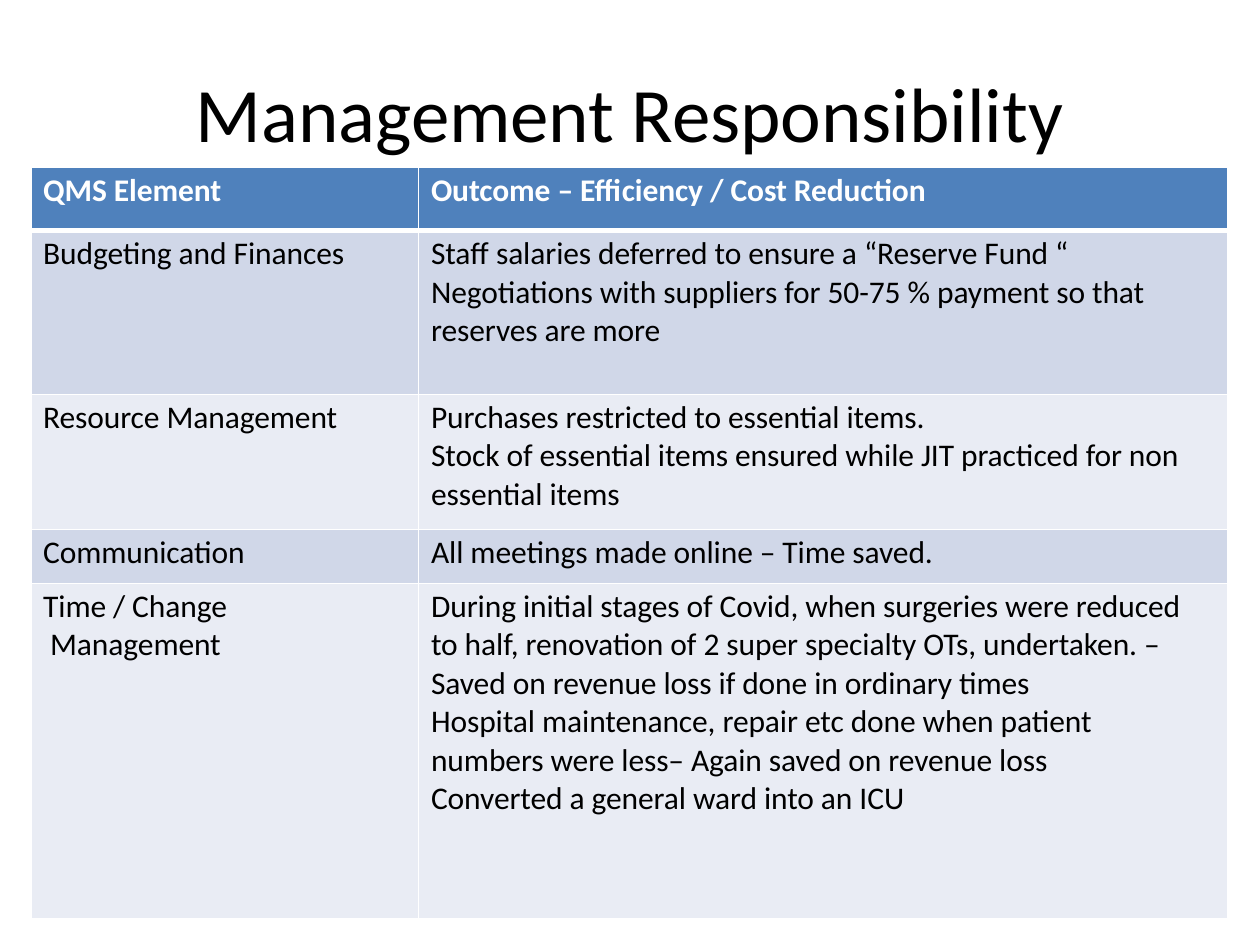
"""Build the Management Responsibility slide with its table of QMS elements and outcomes."""
from lxml.etree import SubElement
from pptx import Presentation
from pptx.dml.color import RGBColor as RGB
from pptx.enum.text import MSO_ANCHOR as ANCHOR, PP_ALIGN as ALIGN
from pptx.oxml.ns import qn
from pptx.util import Cm, Pt

COLORS = {"header": "4F81BC", "odd": "D0D7E8", "even": "E9ECF4",
          "white": "FFFFFF", "black": "000000"}
COLUMNS = [7.82, 16.31]
HEIGHTS = [1.27, 3.3, 2.72, 1.09, 6.76]
ROWS = [
    (["QMS Element"], ["Outcome – Efficiency / Cost Reduction"]),
    (["Budgeting and Finances"],
     ["Staff salaries deferred to ensure a “Reserve Fund “",
      "Negotiations with suppliers for 50-75 % payment so that reserves are more"]),
    (["Resource Management"],
     ["Purchases restricted to essential items.",
      "Stock of essential items ensured while JIT practiced for non essential items"]),
    (["Communication"], ["All meetings made online – Time saved."]),
    (["Time / Change", " Management"],
     ["During initial stages of Covid, when surgeries were reduced to half, "
      "renovation of 2 super specialty OTs, undertaken. – "
      "Saved on revenue loss if done in ordinary times",
      "Hospital maintenance, repair etc done when patient numbers were less– "
      "Again saved on revenue loss",
      "Converted a general ward into an ICU"]),
]


class SlideBuilder:
    """Hold the style and the current slide, and add each kind of element."""

    font = "Calibri"
    title_frame = {"margin_left": 0, "margin_right": 0, "margin_top": Cm(0.03),
                   "margin_bottom": 0, "vertical_anchor": ANCHOR.TOP,
                   "word_wrap": False}
    cell_format = {"margin_left": Cm(0.25), "margin_right": Cm(0.6),
                   "margin_top": Cm(0.08), "margin_bottom": 0,
                   "vertical_anchor": ANCHOR.TOP}

    def __init__(self, prs):
        """Add a title-only slide to the presentation."""
        self.s = prs.slides.add_slide(prs.slide_layouts[5])

    def apply(self, obj, values):
        """Set every attribute in values on the object."""
        for name, value in values.items():
            setattr(obj, name, value)

    def add_text(self, tf, lines, size, color, bold=False, before=0, align=ALIGN.LEFT):
        """Add one paragraph per line, with space before the first."""
        for i, line in enumerate(lines):
            p = tf.add_paragraph() if i else tf.paragraphs[0]
            self.apply(p, {"alignment": align, "space_before": Pt(0 if i else before)})
            r = p.add_run()
            r.text = line
            self.apply(r.font, {"name": self.font, "size": Pt(size), "bold": bold})
            r.font.color.rgb = RGB.from_string(COLORS[color])
            r._r.get_or_add_rPr().set("spc", "-5")

    def title(self, text, left, top, width, height):
        """Place and fill the title placeholder."""
        sp = self.s.shapes.title
        self.apply(sp, {"left": Cm(left), "top": Cm(top),
                        "width": Cm(width), "height": Cm(height)})
        self.apply(sp.text_frame, self.title_frame)
        self.add_text(sp.text_frame, [text], 44, "black", before=1.1, align=ALIGN.CENTER)

    def borders(self, cell, widths):
        """Draw white cell borders, given widths in points by side."""
        tc_pr = cell._tc.get_or_add_tcPr()
        for i, (side, width) in enumerate(widths.items()):
            ln = SubElement(tc_pr, qn(f"a:ln{side}"), w=str(Pt(width)))
            fill = SubElement(ln, qn("a:solidFill"))
            SubElement(fill, qn("a:srgbClr"), val=COLORS["white"])
            tc_pr.insert(i, ln)

    def table(self, rows, left, top, columns, heights):
        """Add a table with a header row and alternating body rows."""
        frame = self.s.shapes.add_table(len(rows), len(columns), Cm(left), Cm(top),
                                        Cm(sum(columns)), Cm(sum(heights)))
        tbl = frame.table
        for column, width in zip(tbl.columns, columns):
            column.width = Cm(width)
        for i, (row, height, texts) in enumerate(zip(tbl.rows, heights, rows)):
            row.height = Cm(height)
            fill = "header" if i == 0 else "odd" if i % 2 else "even"
            for cell, lines in zip(row.cells, texts):
                self.apply(cell, self.cell_format)
                cell.fill.solid()
                cell.fill.fore_color.rgb = RGB.from_string(COLORS[fill])
                self.borders(cell, {"L": 1, "R": 1, "T": 3 if i == 1 else 1,
                                    "B": 3 if i == 0 else 1})
                self.add_text(cell.text_frame, lines, 18, "black" if i else "white",
                              bold=i == 0, before=2.4)


def main():
    """Build and save the presentation."""
    prs = Presentation()
    prs.slide_width, prs.slide_height = Cm(25.4), Cm(19.05)
    slide = SlideBuilder(prs)
    slide.title("Management Responsibility", 3.89, 1.3, 17.6, 1.93)
    slide.table(ROWS, 0.62, 3.38, COLUMNS, HEIGHTS)
    prs.save("out.pptx")


if __name__ == "__main__":
    main()
